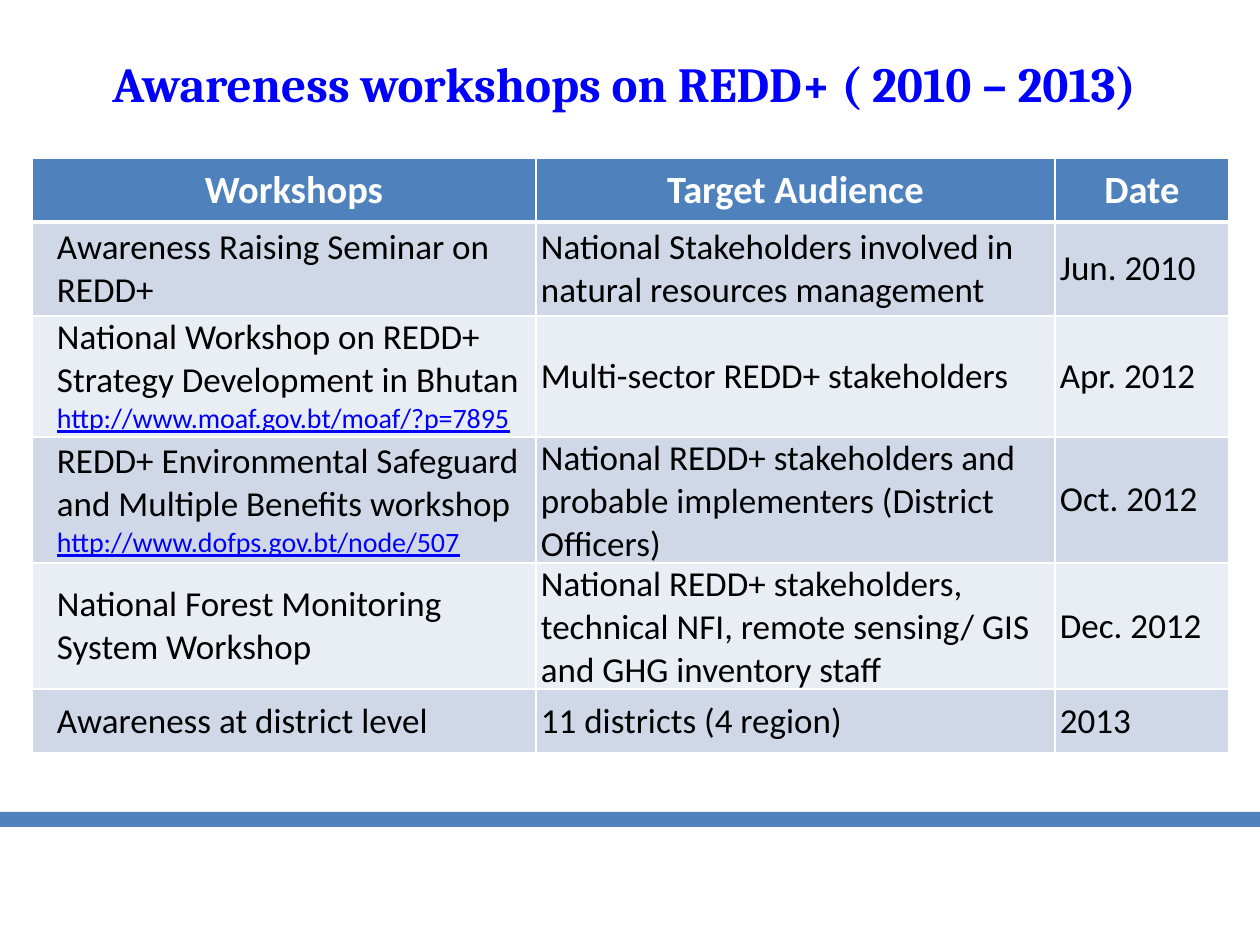
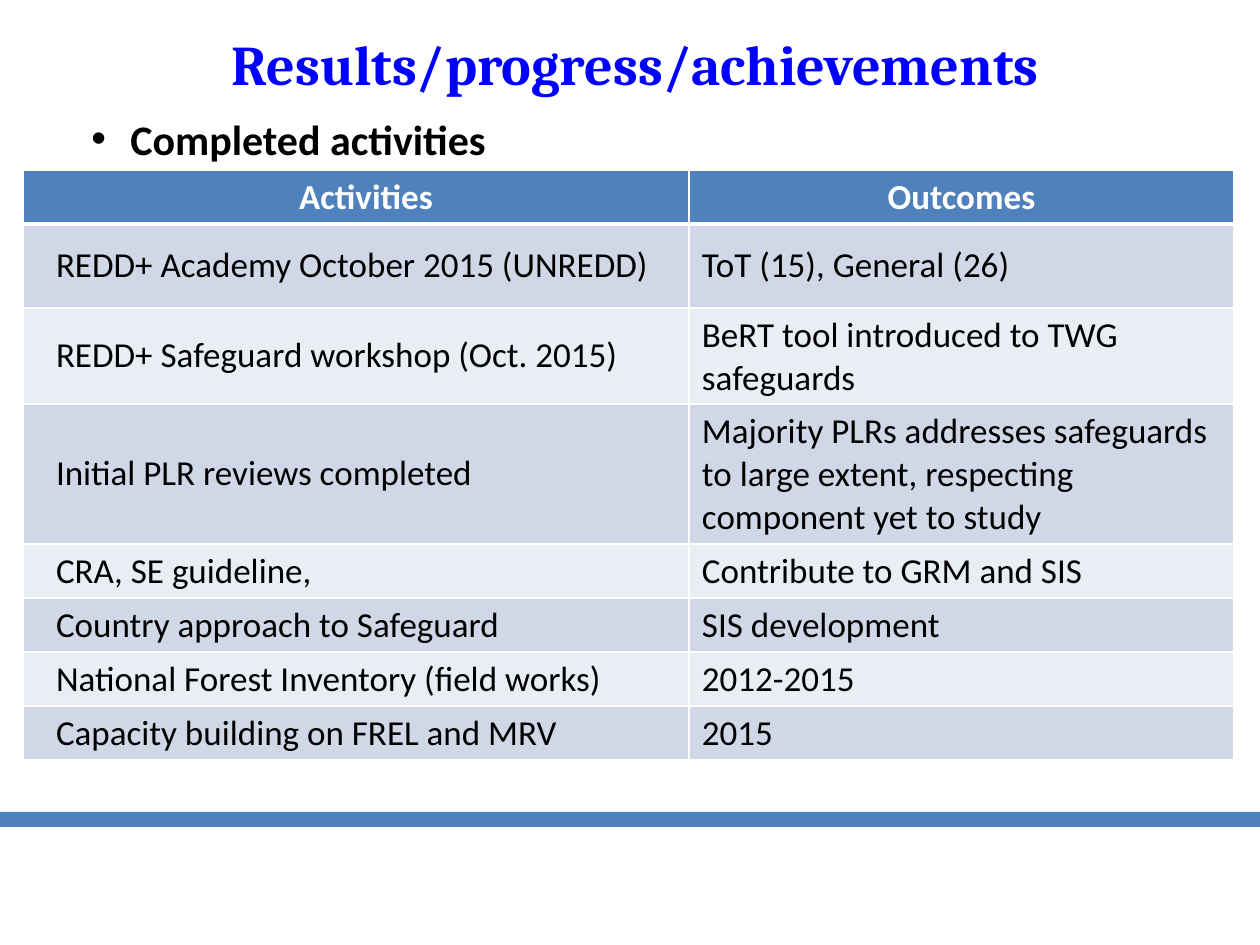
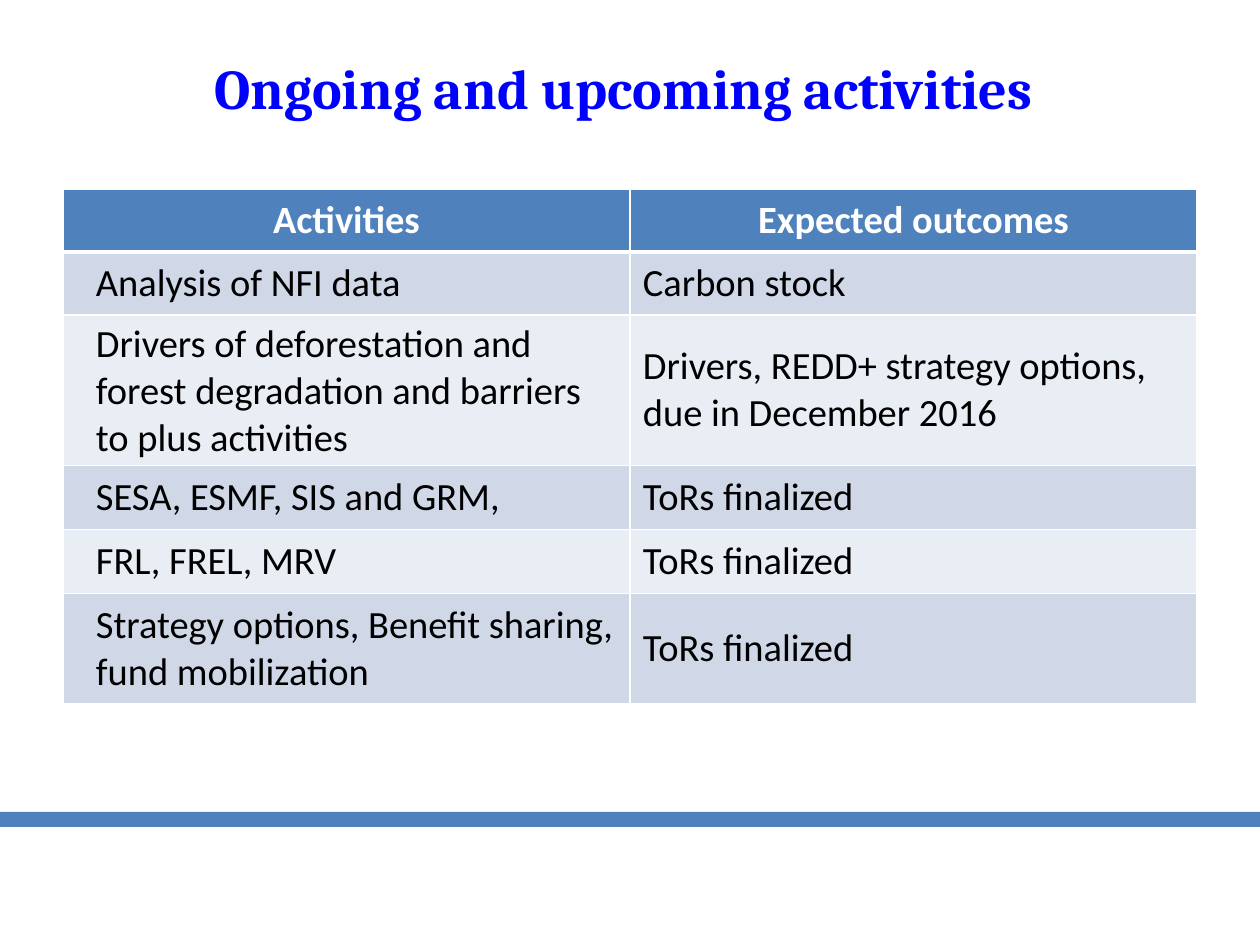
from lxml import etree
from pptx import Presentation
from pptx import util as u
from pptx.dml.color import RGBColor
from pptx.enum import shapes, text
from pptx.oxml.ns import qn

PX = u.Inches(1) / 126
COLORS = {
    "band": "4F81BD",
    "title": "0000FF",
    "link": "0000FF",
    "text": "000000",
    "white": "FFFFFF",
    "odd_row": "D0D8E8",
    "even_row": "E9EDF4",
}
TITLE_FONT, BODY_FONT = "Cambria", "Calibri"
FIRST_COLUMN_INDENT = 20
CELL_INSETS = (13, 6)
LINK_SIZE = 16


def px(length):
    return u.Emu(round(length * PX))


def rgb(name):
    return RGBColor.from_string(COLORS[name])


def add_run(paragraph, wording, size, color, font=BODY_FONT, bold=False, underline=False):
    run = paragraph.add_run()
    run.text = wording
    run.font.name = font
    run.font.size = u.Pt(size)
    run.font.bold = bold
    run.font.underline = underline
    run.font.color.rgb = rgb(color)


def set_indent(paragraph, left, first=0):
    properties = paragraph._p.get_or_add_pPr()
    properties.set("marL", str(px(left)))
    properties.set("indent", str(px(first)))
    return properties


def add_text_box(slide, box, anchor):
    frame = slide.shapes.add_textbox(*map(px, box)).text_frame
    frame.word_wrap = True
    frame.vertical_anchor = anchor
    return frame.paragraphs[0]


# Parts shared by all slides
def add_footer_band(slide):
    band = slide.shapes.add_shape(shapes.MSO_SHAPE.RECTANGLE, *map(px, (0, 812, 1260, 15)))
    band.shadow.inherit = False
    band.fill.solid()
    band.fill.fore_color.rgb = rgb("band")
    band.line.fill.background()


def add_title(slide, box, wording, size):
    paragraph = add_text_box(slide, box, text.MSO_ANCHOR.MIDDLE)
    paragraph.alignment = text.PP_ALIGN.CENTER
    add_run(paragraph, wording, size, "title", TITLE_FONT, bold=True)


def add_bullet(slide, box, wording):
    paragraph = add_text_box(slide, box, text.MSO_ANCHOR.TOP)
    properties = set_indent(paragraph, 39, -39)
    etree.SubElement(properties, qn("a:buFont"), typeface="Arial")
    etree.SubElement(properties, qn("a:buChar"), char="•")
    add_run(paragraph, wording, 24, "text", bold=True)


# Tables
def set_borders(cell, top, bottom):
    properties = cell._tc.get_or_add_tcPr()
    for side, width in (("L", 1), ("R", 1), ("T", top), ("B", bottom)):
        line = etree.SubElement(properties, qn(f"a:ln{side}"), w=str(u.Pt(width)))
        fill = etree.SubElement(line, qn("a:solidFill"))
        etree.SubElement(fill, qn("a:srgbClr"), val=COLORS["white"])


def fill_cell(cell, wording, row, indent, size, insets):
    header = row == 0
    set_borders(cell, top=3 if row == 1 else 1, bottom=3 if header else 1)
    cell.fill.solid()
    cell.fill.fore_color.rgb = rgb("band" if header else "odd_row" if row % 2 else "even_row")
    cell.vertical_anchor = text.MSO_ANCHOR.MIDDLE
    cell.margin_left = cell.margin_right = px(insets[0])
    cell.margin_top = cell.margin_bottom = px(insets[1])

    frame = cell.text_frame
    for number, line in enumerate(wording.split("\n")):
        paragraph = frame.add_paragraph() if number else frame.paragraphs[0]
        paragraph.alignment = text.PP_ALIGN.CENTER if header else text.PP_ALIGN.LEFT
        set_indent(paragraph, indent)
        if line.startswith("http"):
            add_run(paragraph, line, LINK_SIZE, "link", underline=True)
        else:
            add_run(paragraph, line, size, "white" if header else "text", bold=header)


def add_banded_table(slide, left, top, widths, heights, rows, header_size, body_size,
                     insets=CELL_INSETS, header_indent=FIRST_COLUMN_INDENT):
    box = map(px, (left, top, sum(widths), sum(heights)))
    table = slide.shapes.add_table(len(rows), len(widths), *box).table
    for column, width in zip(table.columns, widths):
        column.width = px(width)
    for row, (height, wordings) in enumerate(zip(heights, rows)):
        table.rows[row].height = px(height)
        for column, wording in enumerate(wordings):
            first_indent = FIRST_COLUMN_INDENT if row else header_indent
            fill_cell(table.cell(row, column), wording, row,
                      0 if column else first_indent,
                      body_size if row else header_size, insets)


# Slides
def build_workshops(slide):
    add_title(slide, (62, 39, 1135, 87), "Awareness workshops on REDD+ ( 2010 – 2013) ", 28)
    rows = [
        ("Workshops", "Target Audience", "Date"),
        ("Awareness Raising Seminar on REDD+",
         "National Stakeholders involved in natural resources management", "Jun. 2010"),
        ("National Workshop on REDD+ Strategy Development in Bhutan\n"
         "http://www.moaf.gov.bt/moaf/?p=7895",
         "Multi-sector REDD+ stakeholders", "Apr. 2012"),
        ("REDD+ Environmental Safeguard and Multiple Benefits workshop\n"
         "http://www.dofps.gov.bt/node/507",
         "National REDD+ stakeholders and probable implementers (District Officers)",
         "Oct. 2012"),
        ("National Forest Monitoring System Workshop",
         "National REDD+ stakeholders, technical NFI, remote sensing/ GIS "
         "and GHG inventory staff", "Dec. 2012"),
        ("Awareness at district level", "11 districts (4 region)", "2013"),
    ]
    add_banded_table(slide, 32, 158, (504, 519, 174), (64, 94, 121, 117, 125, 64),
                     rows, 22, 20, insets=(5, 0))


def build_results(slide):
    add_bullet(slide, (79, 107, 1081, 63), "Completed activities")
    add_title(slide, (37, 32, 1197, 63), "Results/progress/achievements", 32)
    rows = [
        ("Activities", "Outcomes"),
        ("REDD+ Academy October 2015 (UNREDD)", "ToT (15), General (26)"),
        ("REDD+ Safeguard workshop (Oct. 2015)", "BeRT tool introduced to TWG safeguards"),
        ("Initial PLR reviews completed",
         "Majority PLRs addresses safeguards to large extent, "
         "respecting component yet to study"),
        ("CRA, SE guideline,", "Contribute to GRM and SIS"),
        ("Country approach to Safeguard", "SIS development"),
        ("National Forest Inventory (field works)", "2012-2015"),
        ("Capacity building on FREL and MRV", "2015"),
    ]
    add_banded_table(slide, 23, 170, (666, 545), (53, 84, 79, 140, 53, 53, 53, 53),
                     rows, 20, 20)


def build_upcoming(slide):
    add_title(slide, (63, 21, 1134, 132), "Ongoing and upcoming activities ", 32)
    rows = [
        ("Activities", "Expected outcomes"),
        ("Analysis of NFI data", "Carbon stock"),
        ("Drivers of deforestation and forest degradation and barriers to plus activities",
         "Drivers, REDD+ strategy options, due in December 2016"),
        ("SESA, ESMF, SIS and GRM,", "ToRs finalized"),
        ("FRL, FREL, MRV", "ToRs finalized"),
        ("Strategy options, Benefit sharing, fund mobilization", "ToRs finalized"),
    ]
    add_banded_table(slide, 63, 189, (567, 567), (63, 63, 141, 64, 64, 110),
                     rows, 22, 22, header_indent=0)


def main():
    presentation = Presentation()
    presentation.slide_width, presentation.slide_height = u.Inches(10), u.Inches(7.5)
    for build in (build_workshops, build_results, build_upcoming):
        slide = presentation.slides.add_slide(presentation.slide_layouts[6])
        add_footer_band(slide)
        build(slide)
    presentation.save("out.pptx")


if __name__ == "__main__":
    main()
